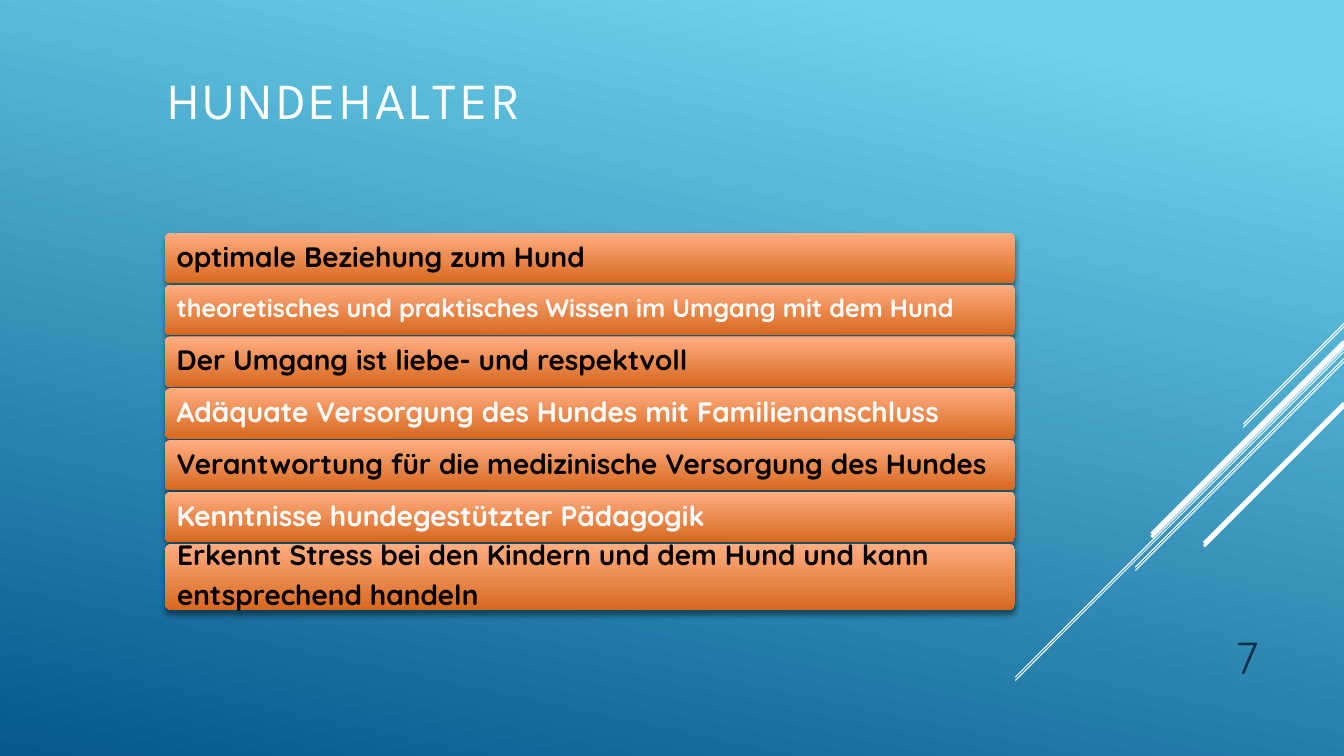
import lxml.etree
import pptx
import pptx.util
import pptx.dml.color
import pptx.enum.shapes
import pptx.enum.text
import pptx.oxml.ns

Pt = pptx.util.Pt
qn = pptx.oxml.ns.qn
ANCHOR = pptx.enum.text.MSO_ANCHOR
ALIGN = pptx.enum.text.PP_ALIGN

HUES = {
    "sky": "6ED2EB", "deep": "06588E", "white": "FFFFFF", "black": "000000",
    "peach": "FFAE82", "rust": "D7681F", "navy": "0A304A",
}
BARS = [
    ("optimale Beziehung zum Hund", 20),
    ("theoretisches und praktisches Wissen im Umgang mit dem Hund", 18),
    ("Der Umgang ist liebe- und respektvoll", 20),
    ("Adäquate Versorgung des Hundes mit Familienanschluss", 20),
    ("Verantwortung für die medizinische Versorgung des Hundes", 20),
    ("Kenntnisse hundegestützter Pädagogik", 20),
    ("Erkennt Stress bei den Kindern und dem Hund und kann\nentsprechend handeln", 20),
]
RAYS = [
    (233.3, 72, 0.75), (251.3, 234.7, 0.75), (258.5, 149, 0.75),
    (246.2, 137.5, 2.25), (290.2, 100, 2.25),
]
WIDE, HIGH = 960, 540


def hue(name):
    """Return the named colour."""
    return pptx.dml.color.RGBColor.from_string(HUES[name])


def blend(fill, stops, angle):
    """Fill with a straight gradient of two stops, angle counter-clockwise."""
    fill.gradient()
    fill.gradient_angle = angle
    for stop, (place, name) in zip(fill.gradient_stops, stops):
        stop.position = place
        stop.color.rgb = hue(name)


def style(para, size, face, name, bold=False):
    """Set the font of a paragraph."""
    font = para.font
    font.size, font.name, font.bold = Pt(size), face, bold
    font.color.rgb = hue(name)


def ray(slide, top, span, width):
    """Draw a diagonal from the right edge down to the left."""
    line = slide.shapes.add_connector(
        pptx.enum.shapes.MSO_CONNECTOR.STRAIGHT,
        Pt(WIDE), Pt(top), Pt(WIDE - span), Pt(top + span))
    line.line.color.rgb = hue("white")
    line.line.width = Pt(width)
    lxml.etree.SubElement(line._element.spPr, qn("a:effectLst"))


def shade(shape):
    """Give a shape a soft shadow below it."""
    shape.shadow.inherit = False
    effects = shape._element.spPr.find(qn("a:effectLst"))
    outer = lxml.etree.SubElement(
        effects, qn("a:outerShdw"), blurRad=str(Pt(4)), dist=str(Pt(3)),
        dir="5400000", algn="ctr", rotWithShape="0")
    tint = lxml.etree.SubElement(outer, qn("a:srgbClr"), val=HUES["black"])
    lxml.etree.SubElement(tint, qn("a:alpha"), val="46000")


def bar(slide, top, high, text, size, name):
    """Draw one orange bar with its statement."""
    shape = slide.shapes.add_shape(
        pptx.enum.shapes.MSO_SHAPE.ROUNDED_RECTANGLE,
        Pt(118), Pt(top), Pt(607), Pt(high))
    shape.adjustments[0] = 0.1
    blend(shape.fill, [(0, "peach"), (1, "rust")], 270)
    shape.line.fill.background()
    shade(shape)
    frame = shape.text_frame
    frame.word_wrap = True
    frame.vertical_anchor = ANCHOR.MIDDLE
    frame.margin_left = frame.margin_right = Pt(7.2)
    frame.margin_top = frame.margin_bottom = 0
    frame.text = text
    for para in frame.paragraphs:
        para.alignment = ALIGN.LEFT
        para.line_spacing = 0.9
        para.space_after = Pt(7)
        style(para, size, "Quicksand", name, True)


def head(slide, text):
    """Place and format the title."""
    title = slide.shapes.title
    title.left, title.top = Pt(113), Pt(11.5)
    title.width, title.height = Pt(672), Pt(119)
    frame = title.text_frame
    frame.text = text
    frame.vertical_anchor = ANCHOR.MIDDLE
    para = frame.paragraphs[0]
    para.alignment = ALIGN.LEFT
    style(para, 36, "League Spartan", "white")
    para.runs[0]._r.get_or_add_rPr().set("spc", "300")


def folio(slide, text):
    """Write the page number."""
    box = slide.shapes.add_textbox(Pt(816), Pt(439), Pt(90), Pt(52.5))
    frame = box.text_frame
    frame.word_wrap = True
    frame.vertical_anchor = ANCHOR.BOTTOM
    frame.text = text
    para = frame.paragraphs[0]
    para.alignment = ALIGN.RIGHT
    para.space_after = Pt(6)
    style(para, 32, "Quicksand", "navy")


def main():
    """Build the slide and save it."""
    deck = pptx.Presentation()
    deck.slide_width, deck.slide_height = Pt(WIDE), Pt(HIGH)
    slide = deck.slides.add_slide(deck.slide_layouts[5])
    blend(slide.background.fill, [(0.1, "sky"), (1, "deep")], 258)
    for shift in (0, -2.3):
        for top, span, width in RAYS:
            ray(slide, top + shift, span, width)
    head(slide, "HUNDEHALTER")
    folio(slide, "7")
    for row, (text, size) in enumerate(BARS):
        high = 47.5 if "\n" in text else 36
        name = "white" if row % 2 else "black"
        bar(slide, 166.3 + 37 * row, high, text, size, name)
    deck.save("out.pptx")


if __name__ == "__main__":
    main()
